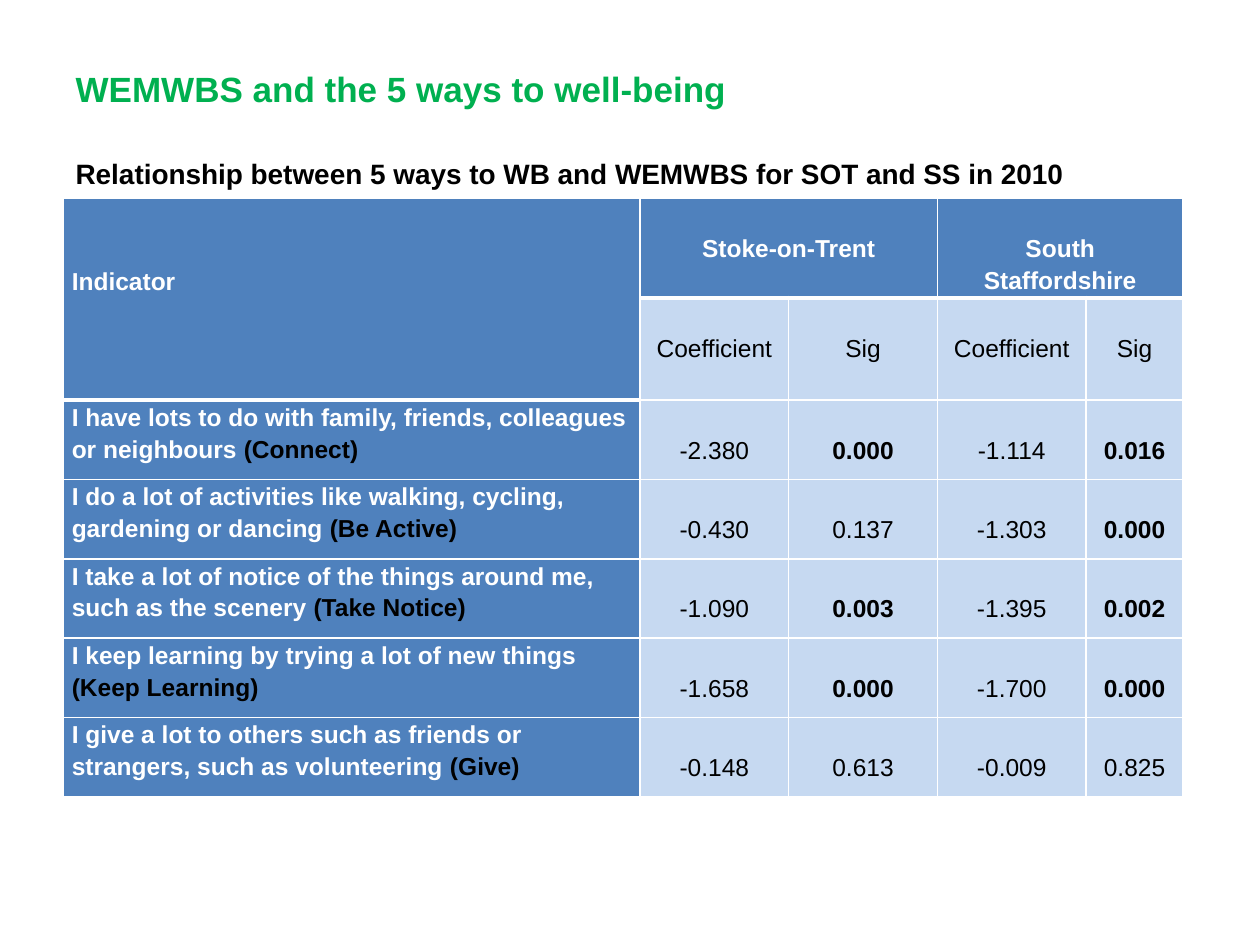
from dataclasses import dataclass
from lxml import etree
from pptx import Presentation, util as u
from pptx.dml.color import RGBColor
from pptx.enum import text
from pptx.oxml.ns import qn

WHITE, BLACK, GREEN = "FFFFFF", "000000", "00B050"
BLUE, PALE = "4F81BD", "C6D9F1"
LINE = 0.26

COLUMNS = [4.58, 1.18, 1.18, 1.18, 0.77]
ROWS = [0.79, 0.81] + [0.63] * 5
REGIONS = ["Stoke-on-Trent", "South Staffordshire"]
INDICATORS = [
    ([[("I have lots to do with family, friends, colleagues or neighbours ", WHITE), ("(Connect)", BLACK)]],
     ["-2.380", "0.000", "-1.114", "0.016"]),
    ([[("I do a lot of activities like walking, cycling, gardening or dancing ", WHITE), ("(Be Active)", BLACK)]],
     ["-0.430", "0.137", "-1.303", "0.000"]),
    ([[("I take a lot of notice of the things around me, such as the scenery ", WHITE), ("(Take Notice)", BLACK)]],
     ["-1.090", "0.003", "-1.395", "0.002"]),
    ([[("I keep learning by trying a lot of new things", WHITE)], [("(Keep Learning)", BLACK)]],
     ["-1.658", "0.000", "-1.700", "0.000"]),
    ([[("I give a lot to others such as friends or strangers, such as volunteering ", WHITE), ("(Give)", BLACK)]],
     ["-0.148", "0.613", "-0.009", "0.825"]),
]


def color(value):
    return RGBColor.from_string(value)


@dataclass
class Sheet:
    page: object
    width: int
    height: int
    font: str = "Arial"

    def place(self, shape, left, top, width, height):
        shape.left, shape.width = int(left * self.width), int(width * self.width)
        shape.top, shape.height = int(top * self.height), int(height * self.height)

    def add_spans(self, para, spans, size, bold, align, spacing):
        para.alignment, para.line_spacing = align, spacing
        para.space_before = u.Pt(0)
        for words, ink in spans:
            span = para.add_run()
            span.text = words
            span.font.name, span.font.size, span.font.bold = self.font, u.Pt(size), bold
            span.font.color.rgb = color(ink)

    def heading(self, box, share, words, size, ink, drop=0.05):
        self.place(box, *share)
        frame = box.text_frame
        frame.word_wrap, frame.auto_size = True, text.MSO_AUTO_SIZE.NONE
        frame.vertical_anchor, frame.margin_top = text.MSO_ANCHOR.TOP, u.Inches(drop)
        para = frame.paragraphs[0]
        props = para._p.get_or_add_pPr()
        props.set("marL", "0")
        props.set("indent", "0")
        etree.SubElement(props, qn("a:buNone"))
        self.add_spans(para, [(words, ink)], size, True, text.PP_ALIGN.LEFT, 0.9)

    def table(self, left, top, columns, rows):
        frame = self.page.shapes.add_table(
            len(rows), len(columns), int(left * self.width), int(top * self.height),
            u.Inches(sum(columns)), u.Inches(sum(rows)))
        grid = frame.table
        for column, width in zip(grid.columns, columns):
            column.width = u.Inches(width)
        for row, height in zip(grid.rows, rows):
            row.height = u.Inches(height)
        return grid

    def border(self, cell, **widths):
        props = cell._tc.get_or_add_tcPr()
        for side in "LRTB":
            line = etree.SubElement(props, qn("a:ln" + side), w=str(u.Pt(widths.get(side, 1))))
            fill = etree.SubElement(line, qn("a:solidFill"))
            etree.SubElement(fill, qn("a:srgbClr"), val=WHITE)

    def paint(self, cell, fill, **widths):
        self.border(cell, **widths)
        cell.fill.solid()
        cell.fill.fore_color.rgb = color(fill)

    def fill_cell(self, cell, paragraphs, bold, align=text.PP_ALIGN.CENTER, lines=1):
        cell.margin_left = cell.margin_right = u.Inches(0.07)
        cell.margin_top, cell.margin_bottom = u.Inches(lines * LINE), 0
        frame = cell.text_frame
        for index, spans in enumerate(paragraphs):
            para = frame.add_paragraph() if index else frame.paragraphs[0]
            self.add_spans(para, spans, 14, bold, align, 1.15)


def main():
    deck = Presentation()
    deck.slide_width, deck.slide_height = u.Inches(10), u.Inches(7.5)
    page = deck.slides.add_slide(deck.slide_layouts[1])
    sheet = Sheet(page, deck.slide_width, deck.slide_height)
    title, body = page.placeholders
    sheet.heading(body, (0.05, 0.06, 0.88, 0.54),
                  "Relationship between 5 ways to WB and WEMWBS for SOT and SS in 2010", 16, BLACK, 0.82)
    sheet.heading(title, (0.05, 0.07, 0.6, 0.05), "WEMWBS and the 5 ways to well-being", 20, GREEN)

    grid = sheet.table(0.05, 0.21, COLUMNS, ROWS)
    for r in range(len(ROWS)):
        for c in range(len(COLUMNS)):
            header_end = 0 if c else 1
            sheet.paint(grid.cell(r, c), BLUE if r == 0 or c == 0 else PALE,
                        B=3 if r == header_end else 1, T=3 if r == header_end + 1 else 1)

    left = text.PP_ALIGN.LEFT
    grid.cell(0, 0).merge(grid.cell(1, 0))
    sheet.fill_cell(grid.cell(0, 0), [[("Indicator", WHITE)]], True, left, 2)
    for index, region in enumerate(REGIONS):
        first = 1 + 2 * index
        grid.cell(0, first).merge(grid.cell(0, first + 1))
        sheet.fill_cell(grid.cell(0, first), [[(region, WHITE)]], True)
        for offset, label in enumerate(["Coefficient", "Sig"]):
            sheet.fill_cell(grid.cell(1, first + offset), [[(label, BLACK)]], False)

    for r, (indicator, values) in enumerate(INDICATORS, 2):
        sheet.fill_cell(grid.cell(r, 0), indicator, True, left, 0)
        for c, value in enumerate(values, 1):
            significant = c % 2 == 0 and float(value) < 0.05
            sheet.fill_cell(grid.cell(r, c), [[(value, BLACK)]], significant)
    deck.save("out.pptx")


if __name__ == "__main__":
    main()
